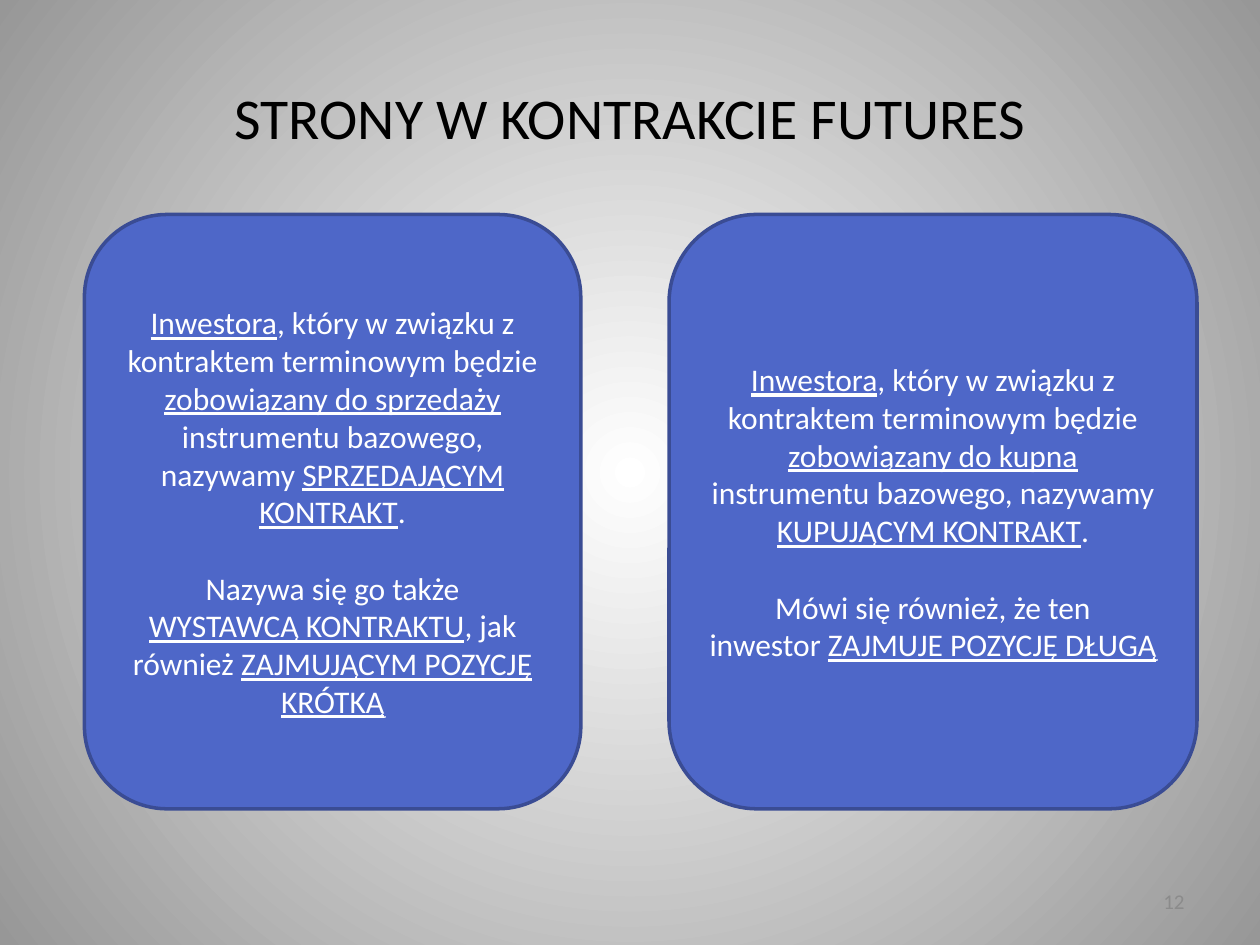
from pptx import Presentation, util as u
from pptx.dml.color import RGBColor
from pptx.enum import shapes, text
from pptx.oxml import parse_xml
from pptx.oxml.ns import nsdecls

BLACK = RGBColor(0, 0, 0)
WHITE = RGBColor(255, 255, 255)
GRAY = RGBColor(0x8B, 0x8B, 0x8B)
EDGE = RGBColor(0x97, 0x97, 0x97)
BLUE = RGBColor(0x4E, 0x67, 0xC8)
NAVY = RGBColor(0x3A, 0x4C, 0x94)

TITLE = "STRONY W KONTRAKCIE FUTURES"
PAGE = "12"
CARDS = [
    (0.067, 0.394, [
        "_Inwestora_, który w związku z kontraktem terminowym będzie _zobowiązany do sprzedaży_",
        "instrumentu bazowego, nazywamy _SPRZEDAJĄCYM KONTRAKT_.",
        "Nazywa się go także",
        "_WYSTAWCĄ KONTRAKTU_, jak również _ZAJMUJĄCYM POZYCJĘ KRÓTKĄ_",
    ]),
    (0.531, 0.419, [
        "_Inwestora_, który w związku z kontraktem terminowym będzie _zobowiązany do kupna_",
        "instrumentu bazowego, nazywamy _KUPUJĄCYM KONTRAKT_.",
        "Mówi się również, że ten",
        "inwestor _ZAJMUJE POZYCJĘ DŁUGĄ_",
    ]),
]
TOP, TALL = 0.227, 0.629
BREAK = 2

deck = Presentation()
deck.slide_width, deck.slide_height = u.Inches(10), u.Inches(7.5)
slide = deck.slides.add_slide(deck.slide_layouts[5])


def area(x, y, w, h):
    wide, high = deck.slide_width, deck.slide_height
    return int(x * wide), int(y * high), int(w * wide), int(h * high)


def write(shape, lines, size=18, color=WHITE, align=text.PP_ALIGN.CENTER, gap=0):
    frame = shape.text_frame
    frame.word_wrap = True
    frame.vertical_anchor = text.MSO_ANCHOR.MIDDLE
    for row, line in enumerate(lines):
        para = frame.add_paragraph() if row else frame.paragraphs[0]
        para.alignment = align
        if gap and row == BREAK:
            para.space_before = u.Pt(gap)
        for part, words in enumerate(line.split("_")):
            if words:
                run = para.add_run()
                run.text = words
                font = run.font
                font.name, font.size = "Calibri", u.Pt(size)
                font.color.rgb = color
                font.underline = part % 2 == 1


fill = slide.background.fill
fill.gradient()
for stop, color, spot in zip(fill.gradient_stops, (WHITE, EDGE), (0, 1)):
    stop.color.rgb, stop.position = color, spot
line = slide.element.xpath(".//p:bg//a:lin")[0]
line.getparent().replace(line, parse_xml(
    f'<a:path {nsdecls("a")} path="circle">'
    '<a:fillToRect l="50000" t="50000" r="50000" b="50000"/></a:path>'))

title = slide.shapes.title
title.left, title.top, title.width, title.height = area(0.05, 0.04, 0.9, 1 / 6)
write(title, [TITLE], size=33, color=BLACK)

for left, width, lines in CARDS:
    card = slide.shapes.add_shape(
        shapes.MSO_SHAPE.ROUNDED_RECTANGLE, *area(left, TOP, width, TALL))
    card.shadow.inherit = False
    card.fill.solid()
    card.fill.fore_color.rgb = BLUE
    card.line.color.rgb = NAVY
    card.line.width = u.Pt(2)
    write(card, lines, gap=22)

page = slide.shapes.add_textbox(*area(0.717, 0.927, 0.233, 0.053))
write(page, [PAGE], size=12, color=GRAY, align=text.PP_ALIGN.RIGHT)

deck.save("out.pptx")
